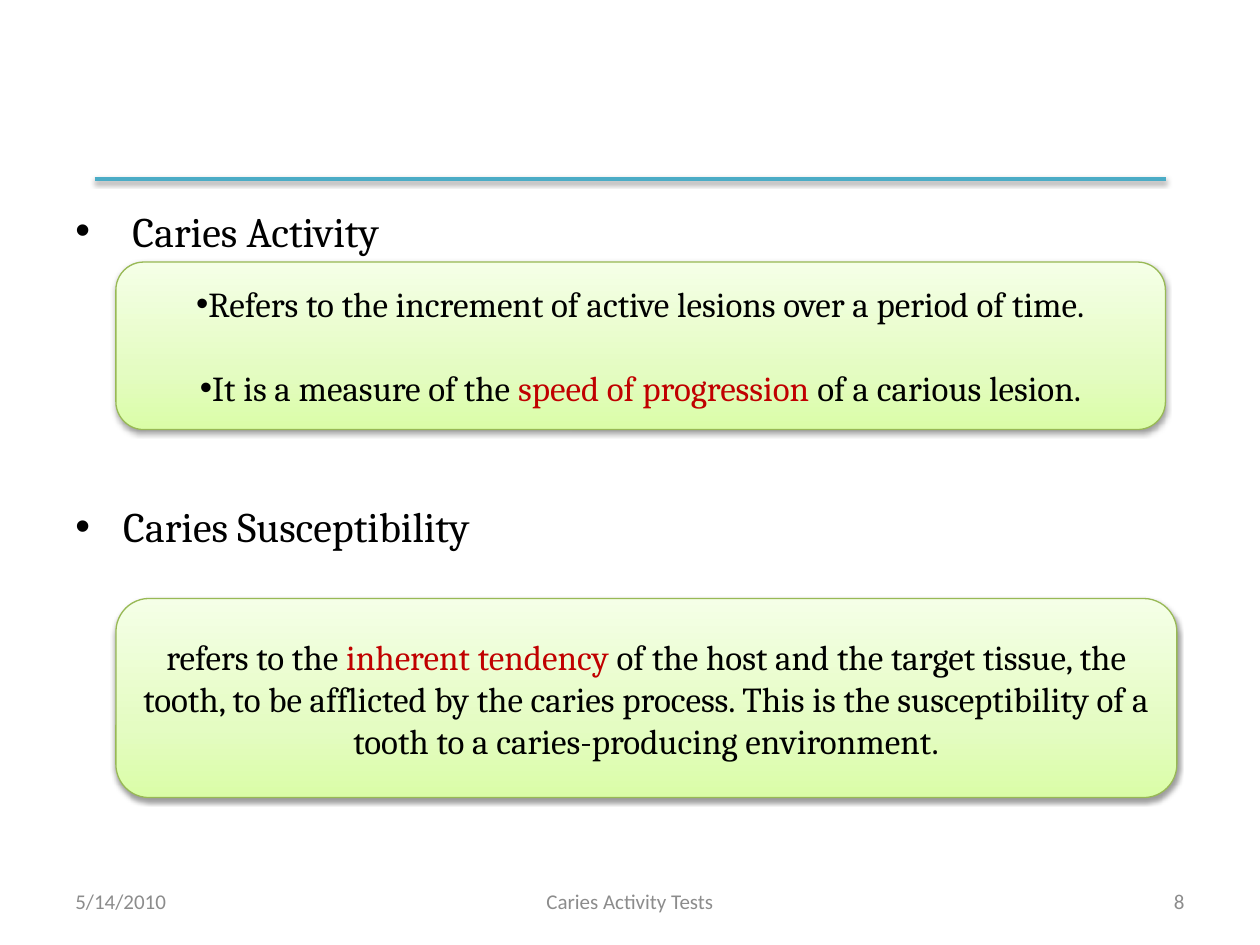
from lxml import etree
from pptx import Presentation
from pptx.dml.color import RGBColor
from pptx.enum.shapes import MSO_CONNECTOR as Connector, MSO_SHAPE as Shape
from pptx.enum.text import MSO_ANCHOR as Anchor, PP_ALIGN as Align
from pptx.oxml import parse_xml
from pptx.oxml.ns import nsdecls, qn
from pptx.util import Inches, Pt

BLACK = RGBColor(0x00, 0x00, 0x00)
RED = RGBColor(0xC0, 0x00, 0x00)
GRAY = RGBColor(0x8C, 0x8C, 0x8C)
TEAL = RGBColor(0x4B, 0xAC, 0xC6)
GREEN = RGBColor(0x98, 0xB9, 0x55)
GRADIENT = [(0, "DAFDA7"), (35, "E4FCC2"), (100, "F5FFE7")]

WIDTH, HEIGHT = 10, 7.5
MARGIN = 0.5
CARD_LEFT = 0.92
FOOTER_TOP, FOOTER_HEIGHT = 6.95, 0.4

HEADINGS = [" Caries Activity", "Caries Susceptibility"]
HEADING_GAP = 140

# top, width, height, bulleted, paragraphs of (text, colour) runs
CARDS = [
    (2.08, 8.33, 1.33, True, [
        [("Refers to the increment of active lesions over a period of time.", BLACK)],
        [("It is a measure of the ", BLACK),
         ("speed of progression ", RED),
         ("of a carious lesion.", BLACK)],
    ]),
    (4.75, 8.42, 1.58, False, [
        [("refers to the ", BLACK),
         ("inherent tendency ", RED),
         ("of the host and the target tissue, the tooth, to be afflicted by the "
          "caries process. This is the susceptibility of a tooth to a "
          "caries-producing environment.", BLACK)],
    ]),
]
CARD_GAP = 24

# text, width, alignment
FOOTERS = [
    ("5/14/2010", 2.33, Align.LEFT),
    ("Caries Activity Tests", 3.17, Align.CENTER),
    ("8", 2.33, Align.RIGHT),
]


def add_bullet(paragraph, indent=0):
    properties = paragraph._p.get_or_add_pPr()
    properties.set("marL", str(Inches(indent)))
    properties.set("indent", str(-Inches(indent)))
    etree.SubElement(properties, qn("a:buFont")).set("typeface", "Arial")
    etree.SubElement(properties, qn("a:buChar")).set("char", "•")


def add_shadow(shape):
    shape._element.spPr.append(parse_xml(
        f'<a:effectLst {nsdecls("a")}><a:outerShdw blurRad="40000" dist="20000" '
        'dir="5400000" rotWithShape="0"><a:srgbClr val="000000">'
        '<a:alpha val="38000"/></a:srgbClr></a:outerShdw></a:effectLst>'))


def fill_gradient(shape):
    stops = "".join(f'<a:gs pos="{position * 1000}"><a:srgbClr val="{color}"/></a:gs>'
                    for position, color in GRADIENT)
    shape._element.spPr.find(qn("a:prstGeom")).addnext(parse_xml(
        f'<a:gradFill {nsdecls("a")} rotWithShape="1"><a:gsLst>{stops}</a:gsLst>'
        '<a:lin ang="16200000" scaled="0"/></a:gradFill>'))


def add_run(paragraph, text, name, size, color):
    run = paragraph.add_run()
    run.text = text
    run.font.name, run.font.size = name, Pt(size)
    run.font.color.rgb = color


def add_textbox(slide, left, top, width, height):
    frame = slide.shapes.add_textbox(*map(Inches, (left, top, width, height))).text_frame
    frame.word_wrap = True
    return frame


def add_paragraph(frame, index, gap):
    if index == 0:
        return frame.paragraphs[0]
    paragraph = frame.add_paragraph()
    paragraph.space_before = Pt(gap)
    return paragraph


def add_headings(slide):
    frame = add_textbox(slide, MARGIN, 1.58, WIDTH - 2 * MARGIN, 4.95)
    for index, heading in enumerate(HEADINGS):
        paragraph = add_paragraph(frame, index, HEADING_GAP)
        add_bullet(paragraph, 0.38)
        add_run(paragraph, heading, "Cambria", 24, BLACK)


def add_rule(slide):
    rule = slide.shapes.add_connector(
        Connector.STRAIGHT, *map(Inches, (0.75, 1.42, WIDTH - 0.75, 1.42)))
    rule.line.color.rgb = TEAL
    rule.line.width = Pt(2)
    add_shadow(rule)


def add_card(slide, top, width, height, bulleted, paragraphs):
    card = slide.shapes.add_shape(
        Shape.ROUNDED_RECTANGLE, *map(Inches, (CARD_LEFT, top, width, height)))
    fill_gradient(card)
    card.line.color.rgb = GREEN
    card.line.width = Pt(0.75)
    add_shadow(card)
    frame = card.text_frame
    frame.word_wrap = True
    frame.vertical_anchor = Anchor.MIDDLE
    for index, runs in enumerate(paragraphs):
        paragraph = add_paragraph(frame, index, CARD_GAP)
        paragraph.alignment = Align.CENTER
        if bulleted:
            add_bullet(paragraph)
        for text, color in runs:
            add_run(paragraph, text, "Cambria", 20, color)


def add_footers(slide):
    free = WIDTH - 2 * MARGIN - sum(width for _, width, _ in FOOTERS)
    left = MARGIN
    for text, width, alignment in FOOTERS:
        frame = add_textbox(slide, left, FOOTER_TOP, width, FOOTER_HEIGHT)
        frame.vertical_anchor = Anchor.MIDDLE
        frame.paragraphs[0].alignment = alignment
        add_run(frame.paragraphs[0], text, "Calibri", 12, GRAY)
        left += width + free / (len(FOOTERS) - 1)


def main():
    presentation = Presentation()
    presentation.slide_width = Inches(WIDTH)
    presentation.slide_height = Inches(HEIGHT)
    slide = presentation.slides.add_slide(presentation.slide_layouts[6])
    add_headings(slide)
    add_rule(slide)
    for card in CARDS:
        add_card(slide, *card)
    add_footers(slide)
    presentation.save("out.pptx")


if __name__ == "__main__":
    main()
